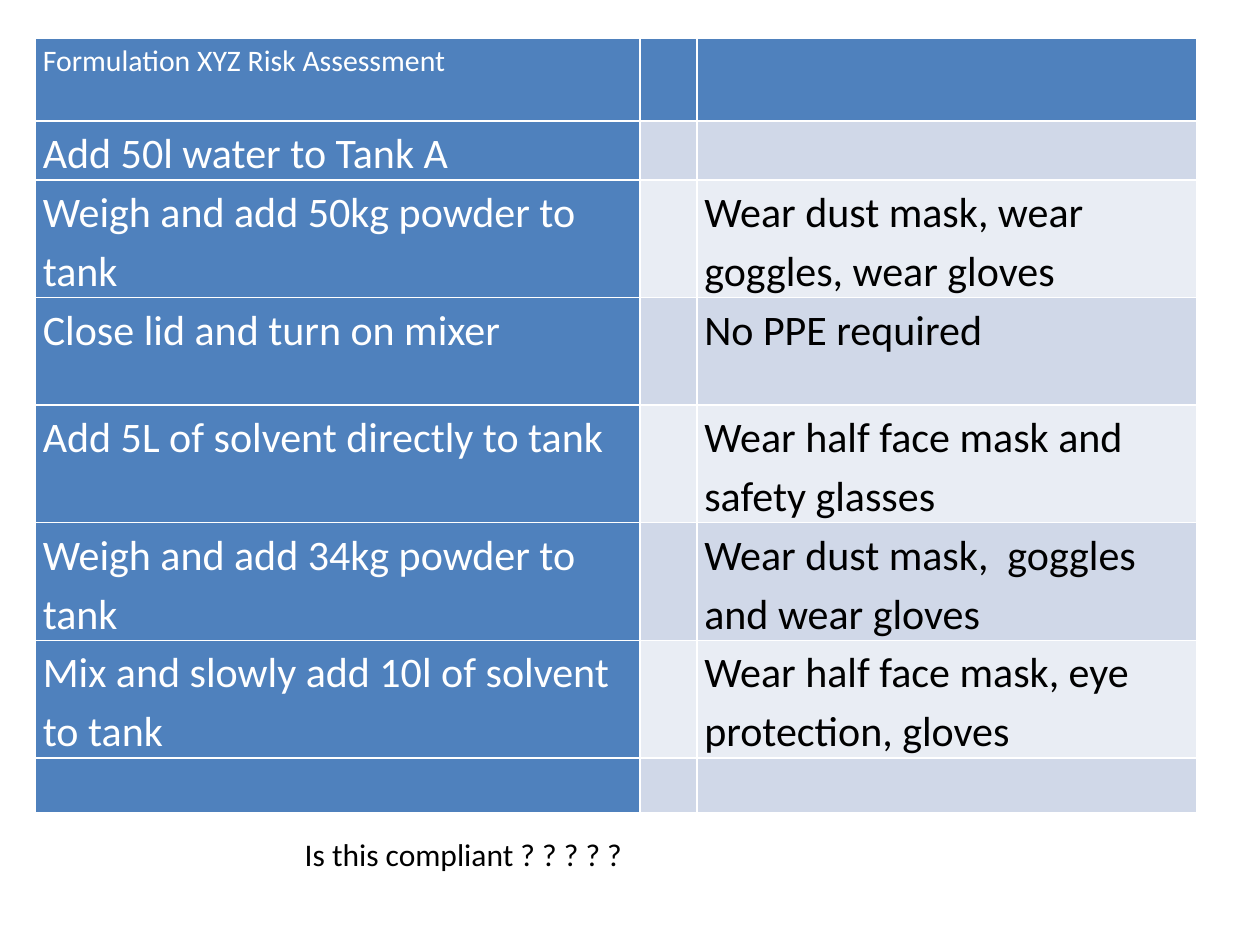
from pptx import Presentation
from pptx.dml.color import RGBColor
from pptx.util import Inches, Pt

BLUE = RGBColor(0x4F, 0x81, 0xBD)
BAND_DARK = RGBColor(0xD0, 0xD8, 0xE8)
BAND_LIGHT = RGBColor(0xE9, 0xED, 0xF4)
WHITE = RGBColor(0xFF, 0xFF, 0xFF)
BLACK = RGBColor(0, 0, 0)

FONT = "Calibri"
BLANK_LAYOUT = 6
COLUMN_WIDTHS = (4.8, 0.45, 3.97)
HEADER_HEIGHT, SINGLE_HEIGHT, DOUBLE_HEIGHT = 0.66, 0.43, 0.85
CELL_MARGINS = {
    "margin_left": Inches(0.06),
    "margin_right": Inches(0.06),
    "margin_top": 0,
    "margin_bottom": 0,
}

# Process step and its protective measure
ASSESSMENT = [
    ("Formulation XYZ Risk Assessment", ""),
    ("Add 50l water to Tank A", ""),
    ("Weigh and add 50kg powder to tank",
     "Wear dust mask, wear goggles, wear gloves"),
    ("Close lid and turn on mixer", "No PPE required"),
    ("Add 5L of solvent directly to tank",
     "Wear half face mask and safety glasses"),
    ("Weigh and add 34kg powder to tank",
     "Wear dust mask,  goggles and wear gloves"),
    ("Mix and slowly add 10l of solvent to tank",
     "Wear half face mask, eye protection, gloves"),
    ("", ""),
]


def apply_format(target, values):
    for name, value in values.items():
        setattr(target, name, value)


def write_text(paragraph, text, size, color):
    paragraph.text = text
    apply_format(paragraph.font, {"name": FONT, "size": Pt(size), "bold": False})
    paragraph.font.color.rgb = color


def fill_cell(cell, text, size, text_color, background):
    apply_format(cell, CELL_MARGINS)
    cell.fill.solid()
    cell.fill.fore_color.rgb = background
    if text:
        paragraph = cell.text_frame.paragraphs[0]
        paragraph.line_spacing = 1.15
        write_text(paragraph, text, size, text_color)


def row_height(row):
    if row == 0:
        return HEADER_HEIGHT
    return SINGLE_HEIGHT if row in (1, len(ASSESSMENT) - 1) else DOUBLE_HEIGHT


def add_assessment(slide):
    heights = [row_height(row) for row in range(len(ASSESSMENT))]
    table = slide.shapes.add_table(
        len(ASSESSMENT), len(COLUMN_WIDTHS), Inches(0.28), Inches(0.3),
        Inches(sum(COLUMN_WIDTHS)), Inches(sum(heights))).table
    table.first_col = True
    for column, width in zip(table.columns, COLUMN_WIDTHS):
        column.width = Inches(width)

    for row, (step, measure) in enumerate(ASSESSMENT):
        table.rows[row].height = Inches(heights[row])
        band = BAND_DARK if row % 2 else BAND_LIGHT
        for column, text in enumerate((step, "", measure)):
            heading = row == 0 or column == 0
            fill_cell(table.cell(row, column), text,
                      size=17 if row == 0 else 24,
                      text_color=WHITE if heading else BLACK,
                      background=BLUE if heading else band)


def add_question(slide):
    box = slide.shapes.add_textbox(
        Inches(2.32), Inches(6.58), Inches(5.28), Inches(0.4))
    box.text_frame.word_wrap = True
    write_text(box.text_frame.paragraphs[0], "Is this compliant ? ? ? ? ?",
               18, BLACK)


def main():
    presentation = Presentation()
    presentation.slide_width = Inches(10)
    presentation.slide_height = Inches(7.5)
    slide = presentation.slides.add_slide(
        presentation.slide_layouts[BLANK_LAYOUT])
    # Risk table with the closing question below it
    add_assessment(slide)
    add_question(slide)
    presentation.save("out.pptx")


if __name__ == "__main__":
    main()
